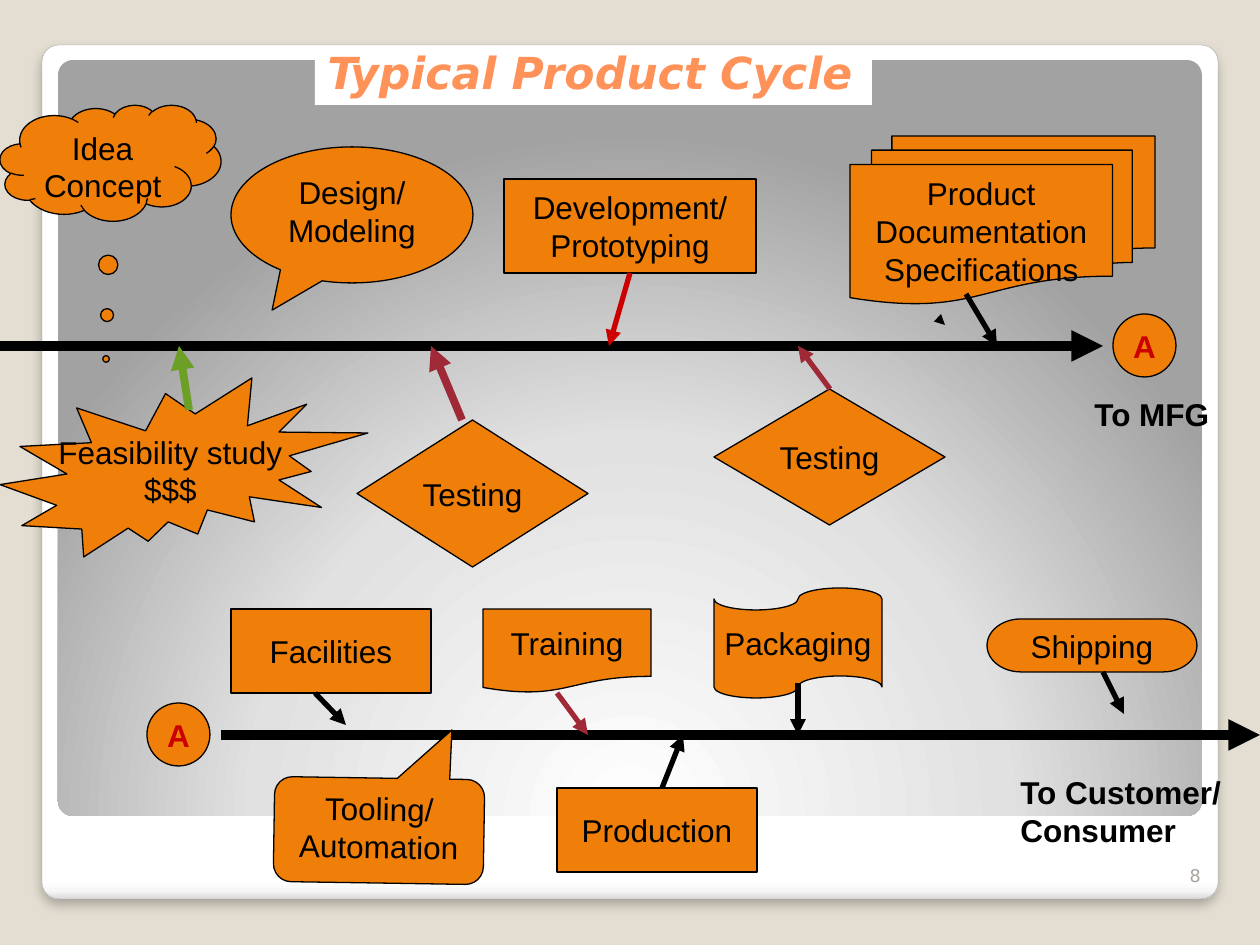
from lxml.etree import SubElement
from pptx import Presentation
from pptx.dml.color import RGBColor
from pptx.enum.shapes import MSO_CONNECTOR, MSO_SHAPE as SHAPE
from pptx.enum.text import MSO_ANCHOR, MSO_AUTO_SIZE, PP_ALIGN
from pptx.oxml import parse_xml
from pptx.oxml.ns import nsdecls, qn
from pptx.util import Pt

EMU_PER_PX = 914400 / 126
ORANGE, BLACK, RED, MAROON, GREEN = "F07F09", "000000", "CC0000", "9F2936", "6B9F25"
MIDDLE, TOP, BOTTOM = MSO_ANCHOR.MIDDLE, MSO_ANCHOR.TOP, MSO_ANCHOR.BOTTOM
BODY = {"size": Pt(18), "name": "Arial"}
BOLD = {**BODY, "bold": True}
DEVELOPMENT_Y, SHIPPING_Y = 346, 735

# shape, box in px, text, extra options
STEPS = [
    (SHAPE.EXPLOSION2, (0, 378, 368, 179), "Feasibility study\n$$$", {}),
    (SHAPE.CLOUD_CALLOUT, (0, 105, 221, 116), "Idea\nConcept",
     {"adj": (-0.02, 1.69), "anchor": TOP, "wrap": True}),
    (SHAPE.OVAL_CALLOUT, (231, 147, 242, 136), "Design/\nModeling",
     {"adj": (-0.33, 0.7), "anchor": TOP, "wrap": True}),
    (SHAPE.FLOWCHART_DECISION, (357, 420, 231, 147), "Testing", {}),
    (SHAPE.RECTANGLE, (504, 179, 252, 94), "Development/\nPrototyping", {}),
    (SHAPE.FLOWCHART_DECISION, (714, 389, 231, 136), "Testing", {}),
    (SHAPE.FLOWCHART_MULTIDOCUMENT, (850, 136, 305, 168),
     "Product\nDocumentation\nSpecifications", {}),
    (SHAPE.RECTANGLE, (231, 609, 200, 84), "Facilities", {}),
    (SHAPE.FLOWCHART_DOCUMENT, (483, 609, 168, 84), "Training", {}),
    (SHAPE.FLOWCHART_PUNCHED_TAPE, (714, 588, 168, 110), "Packaging", {}),
    (SHAPE.FLOWCHART_TERMINATOR, (987, 619, 210, 53), "Shipping", {}),
    (SHAPE.FLOWCHART_PROCESS, (557, 788, 200, 84), "Production", {}),
]

# start, end, colour, width in points
ARROWS = [
    ((189, 410), (179, DEVELOPMENT_Y), GREEN, 4.5),
    ((462, 420), (431, DEVELOPMENT_Y), MAROON, 4.5),
    ((830, 389), (798, DEVELOPMENT_Y), MAROON, 3),
    ((630, 273), (609, DEVELOPMENT_Y), RED, 3),
    ((944, 324), (945, 325), BLACK, 0.75),
    ((966, 294), (997, DEVELOPMENT_Y), BLACK, 3),
    ((315, 693), (346, 725), BLACK, 3),
    ((557, 693), (588, SHIPPING_Y), MAROON, 3),
    ((662, 788), (683, SHIPPING_Y), BLACK, 3),
    ((1103, 672), (1124, 714), BLACK, 3),
    ((798, 683), (798, SHIPPING_Y), BLACK, 3),
]


def px(n):
    return int(round(n * EMU_PER_PX))


def color(hex_code):
    return RGBColor.from_string(hex_code)


def write(sp, text, font, text_color, align, anchor, wrap):
    tf = sp.text_frame
    tf.word_wrap, tf.vertical_anchor = wrap, anchor
    tf.text = text
    for p in tf.paragraphs:
        p.alignment = align
        for r in p.runs:
            for name, value in font.items():
                setattr(r.font, name, value)
            r.font.color.rgb = color(text_color)


def add_step(s, shape, box, text, adj=(), anchor=MIDDLE, wrap=False,
             font=BODY, text_color=BLACK):
    sp = s.shapes.add_shape(shape, *map(px, box))
    sp.shadow.inherit = False
    sp.fill.solid()
    sp.fill.fore_color.rgb = color(ORANGE)
    sp.line.color.rgb = color(BLACK)
    sp.line.width = Pt(0.75)
    for i, value in enumerate(adj):
        sp.adjustments[i] = value
    write(sp, text, font, text_color, PP_ALIGN.CENTER, anchor, wrap)
    return sp


def add_arrow(s, start, end, line_color, width):
    c = s.shapes.add_connector(MSO_CONNECTOR.STRAIGHT, *map(px, start + end))
    c.line.color.rgb = color(line_color)
    c.line.width = Pt(width)
    SubElement(c.line._get_or_add_ln(), qn("a:tailEnd"), type="triangle")
    SubElement(c._element.spPr, qn("a:effectLst"))


def add_label(s, box, text, font=BOLD, text_color=BLACK, align=PP_ALIGN.LEFT,
              anchor=TOP, wrap=False, fill=None):
    sp = s.shapes.add_textbox(*map(px, box))
    write(sp, text, font, text_color, align, anchor, wrap)
    if fill:
        sp.fill.solid()
        sp.fill.fore_color.rgb = color(fill)
    if not wrap:
        sp.text_frame.auto_size = MSO_AUTO_SIZE.SHAPE_TO_FIT_TEXT


def add_panel(s, box, stops, direction):
    """Add a rounded panel with a gradient; direction is the a:lin or a:path XML."""
    sp = s.shapes.add_shape(SHAPE.ROUNDED_RECTANGLE, *map(px, box))
    sp.adjustments[0] = 0.02
    sp.shadow.inherit = False
    sp.line.fill.background()
    sp.fill.background()
    gs = "".join(f'<a:gs pos="{pos * 1000}"><a:srgbClr val="{c}"/></a:gs>' for pos, c in stops)
    grad = parse_xml(f'<a:gradFill {nsdecls("a")} rotWithShape="1"><a:gsLst>{gs}</a:gsLst>'
                     f'{direction}</a:gradFill>')
    spPr = sp._element.spPr
    spPr.replace(spPr.find(qn("a:noFill")), grad)
    return sp


def add_background(s):
    s.background.fill.solid()
    s.background.fill.fore_color.rgb = color("E3DED1")
    card = add_panel(s, (42, 45, 1176, 854),
                     [(0, "FFFFFF"), (98, "FFFFFF"), (99, "F7F7F7"), (100, "DADADA")],
                     '<a:lin ang="5400000" scaled="0"/>')
    card.line.color.rgb = color("A4A4A4")
    card.line.width = Pt(0.16)
    shadow = SubElement(card._element.spPr.find(qn("a:effectLst")), qn("a:outerShdw"),
                        blurRad=str(Pt(6)), dist=str(Pt(4)), dir="5400000",
                        algn="t", rotWithShape="0")
    shade = SubElement(shadow, qn("a:srgbClr"), val=BLACK)
    SubElement(shade, qn("a:alpha"), val="25000")
    add_panel(s, (58, 60, 1144, 756), [(0, "FFFFFF"), (55, "E1E1E1"), (100, "A2A2A2")],
              '<a:path path="circle">'
              '<a:fillToRect l="50000" t="175000" r="50000" b="-75000"/></a:path>')


def add_tooling(s):
    """Add the callout that is flipped to point up, with its text turned upright."""
    sp = add_step(s, SHAPE.ROUNDED_RECTANGULAR_CALLOUT, (274, 778, 210, 105),
                  "Tooling/\nAutomation", (0.34, 0.97, 0.17), TOP, True)
    sp.rotation = 0.9
    sp._element.spPr.find(qn("a:xfrm")).set("flipV", "1")
    sp.text_frame._txBody.bodyPr.set("rot", "10800000")


def main():
    prs = Presentation()
    prs.slide_width, prs.slide_height = px(1260), px(945)
    s = prs.slides.add_slide(prs.slide_layouts[6])
    add_background(s)
    add_label(s, (315, 48, 557, 57), "Typical Product Cycle",
              {"size": Pt(25.2), "name": "DejaVu Sans", "bold": True, "italic": True},
              "FF9258", anchor=BOTTOM, wrap=True, fill="FFFFFF")
    add_label(s, (1150, 842, 63, 50), "8", {"size": Pt(10), "name": "DejaVu Sans"},
              "A8A49B", PP_ALIGN.RIGHT, BOTTOM, True)

    add_arrow(s, (0, DEVELOPMENT_Y), (1103, DEVELOPMENT_Y), BLACK, 6)
    add_arrow(s, (221, SHIPPING_Y), (1260, SHIPPING_Y), BLACK, 6)
    for shape, box, text, options in STEPS:
        add_step(s, shape, box, text, **options)
    add_tooling(s)
    for x, y in ((1113, DEVELOPMENT_Y), (147, SHIPPING_Y)):
        add_step(s, SHAPE.FLOWCHART_CONNECTOR, (x, y - 32, 63, 63), "A",
                 font=BOLD, text_color=RED)
    for arrow in ARROWS:
        add_arrow(s, *arrow)
    add_label(s, (1082, 389, 142, 50), "To MFG")
    add_label(s, (1008, 767, 228, 88), "To Customer/\nConsumer")
    prs.save("out.pptx")


if __name__ == "__main__":
    main()
